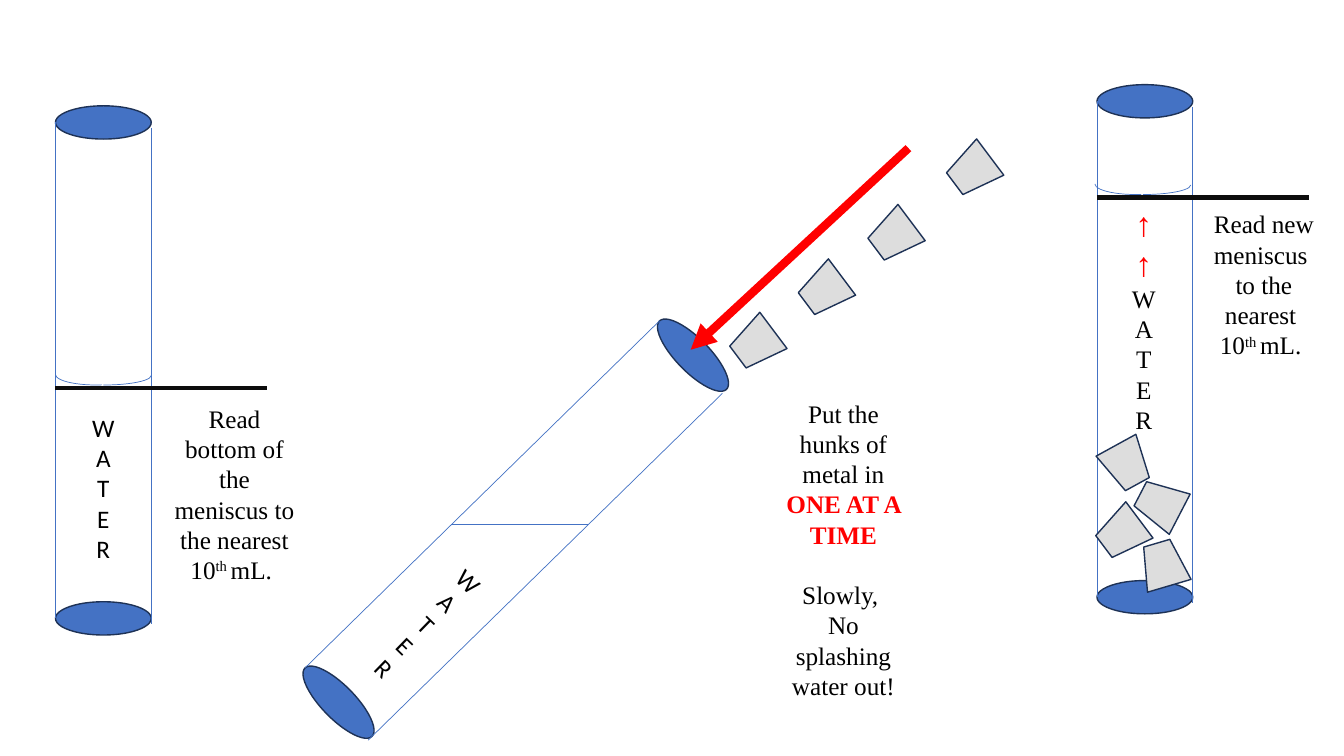
from dataclasses import dataclass
from math import cos, radians, sin

from lxml.etree import SubElement
from pptx import Presentation
from pptx.dml.color import RGBColor as Rgb
from pptx.enum.shapes import MSO_CONNECTOR as Connector, MSO_SHAPE as Shape
from pptx.enum.text import MSO_AUTO_SIZE as AutoSize, PP_ALIGN as Align
from pptx.oxml.ns import qn
from pptx.util import Inches, Pt


@dataclass(frozen=True)
class Theme:
    glass: str = "4472C4"
    edge: str = "1E3256"
    metal: str = "DDDDDD"
    level: str = "0D0D0D"
    ink: str = "000000"
    alert: str = "FF0000"
    serif: str = "Times New Roman"
    sans: str = "Calibri"
    body: float = 18
    rise: float = 24
    gap: float = 21.6
    thin: float = 0.5
    outline: float = 1
    bold: float = 3
    heavy: float = 6


@dataclass(frozen=True)
class Span:
    text: str
    color: str | None = None
    size: float | None = None
    bold: bool | None = None
    raised: bool = False


class LabSlide:
    """Draws lab apparatus on a grid with ten columns and ten rows to the inch."""

    cell = Inches(0.1)
    tube_width, rim_height, tube_length = 9.5, 3.3, 49.2

    def __init__(self, deck, theme):
        self.theme = theme
        self.slide = deck.slides.add_slide(deck.slide_layouts[6])
        self.shapes = self.slide.shapes

    def grid(self, *lengths):
        return [round(length * self.cell) for length in lengths]

    def outlined(self, kind, box, angle=0, fill=None):
        part = self.shapes.add_shape(kind, *self.grid(*box))
        part.rotation = angle
        part.shadow.inherit = False
        if fill:
            part.fill.solid()
            part.fill.fore_color.rgb = Rgb.from_string(fill)
        else:
            part.fill.background()
        part.line.color.rgb = Rgb.from_string(self.theme.edge if fill else self.theme.glass)
        part.line.width = Pt(self.theme.outline if fill else self.theme.thin)
        return part

    def line(self, start, end, color, width, arrow=False):
        stroke = self.shapes.add_connector(Connector.STRAIGHT, *self.grid(*start, *end))
        stroke.line.color.rgb = Rgb.from_string(color)
        stroke.line.width = Pt(width)
        if arrow:
            SubElement(stroke.line._get_or_add_ln(), qn("a:tailEnd")).set("type", "triangle")
        SubElement(stroke._element.spPr, qn("a:effectLst"))

    def cylinder(self, x, y, angle=0):
        turn = radians(angle)
        half, reach = self.tube_width / 2, self.tube_length / 2

        def place(dx, dy):
            return x + dx * cos(turn) - dy * sin(turn), y + dx * sin(turn) + dy * cos(turn)

        for end in (-reach, reach):
            rim_x, rim_y = place(0, end)
            box = (rim_x - half, rim_y - self.rim_height / 2, self.tube_width, self.rim_height)
            self.outlined(Shape.OVAL, box, angle, self.theme.glass)
        for side, shift in ((-half, -0.05), (half, 0.55)):
            self.line(place(side, shift - reach), place(side, shift + reach),
                      self.theme.glass, self.theme.thin)

    def meniscus(self, x, y):
        right = self.outlined(Shape.ARC, (x, y, self.tube_width, 1.9))
        left = self.outlined(Shape.ARC, (x, y - 0.2, 8, 2.1))
        left.adjustments[0] = 143.68
        for arc in (right, left):
            arc._element.spPr.get_or_add_xfrm().set("flipV", "1")
        left._element.spPr.get_or_add_xfrm().set("flipH", "1")

    def reading(self, x, y):
        self.line((x, y), (x + 21, y), self.theme.level, self.theme.bold)

    def hunk(self, x, y, angle):
        self.outlined(Shape.FLOWCHART_MANUAL_OPERATION, (x, y, 4.5, 4.4), angle, self.theme.metal)

    def text(self, box, *paragraphs, font=None, angle=0):
        label = self.shapes.add_textbox(*self.grid(*box))
        label.rotation = angle
        frame = label.text_frame
        frame.word_wrap = True
        frame.auto_size = AutoSize.SHAPE_TO_FIT_TEXT
        for index, spans in enumerate(paragraphs):
            paragraph = frame.add_paragraph() if index else frame.paragraphs[0]
            paragraph.alignment = Align.CENTER
            paragraph.font.name = font or self.theme.serif
            paragraph.font.size = Pt(self.theme.body)
            paragraph.font.color.rgb = Rgb.from_string(self.theme.ink)
            if index == 1:
                paragraph.space_before = Pt(self.theme.gap)
            for span in spans:
                self.add_span(paragraph, span)

    def add_span(self, paragraph, span):
        for index, words in enumerate(span.text.split("\n")):
            if index:
                paragraph.add_line_break()
            if not words:
                continue
            run = paragraph.add_run()
            run.text = words
            if span.color:
                run.font.color.rgb = Rgb.from_string(span.color)
            if span.size:
                run.font.size = Pt(span.size)
            if span.bold:
                run.font.bold = True
            if span.raised:
                run._r.get_or_add_rPr().set("baseline", "30000")


def main():
    deck = Presentation()
    deck.slide_width, deck.slide_height = Inches(13.33), Inches(7.5)
    theme = Theme()
    lab = LabSlide(deck, theme)
    water = Span("\n".join("WATER"))
    tenth = (Span("th ", raised=True), Span("mL. "))

    lab.cylinder(10.25, 36.75)
    lab.meniscus(5.5, 36.3)
    lab.reading(5.5, 38.5)
    lab.text((16, 39.5, 14.5, 19.2), [Span("Read bottom of the meniscus to the nearest 10"), *tenth])
    lab.text((8, 40.4, 4.5, 16.2), [water], font=theme.sans)

    lab.cylinder(51.15, 52.45, 45.6)
    lab.line((44.7, 52), (58.3, 52), theme.glass, theme.thin)
    lab.text((40, 53.9, 4.5, 16.2), [water], font=theme.sans, angle=44.2)
    lab.line((90.1, 14.7), (68.5, 34.7), theme.alert, theme.heavy, arrow=True)
    for x, y in ((72.7, 31.9), (79.5, 26.6), (86.4, 21.2), (94.2, 14.7)):
        lab.hunk(x, y, 53.1)
    lab.text((76.4, 39, 14.5, 31.3),
             [Span("Put the hunks of metal in "), Span("ONE AT A TIME", theme.alert, bold=True)],
             [Span("Slowly, ")],
             [Span("No splashing water out!")])

    lab.cylinder(113.55, 34.65)
    lab.meniscus(108.6, 17.4)
    lab.reading(108.8, 19.6)
    lab.text((111.2, 19.6, 4.5, 24.2), [Span("↑\n↑\n", theme.alert, theme.rise, True), water])
    for x, y, angle in ((113.1, 53.8, 163.6), (109, 50.7, 53.1),
                        (112.8, 47.8, 117.4), (109.5, 43.9, 331.2)):
        lab.hunk(x, y, angle)
    lab.text((118.1, 20.2, 14.5, 16.2),
             [Span("Read new\nmeniscus \nto the nearest \n10"), *tenth])

    deck.save("out.pptx")


if __name__ == "__main__":
    main()
